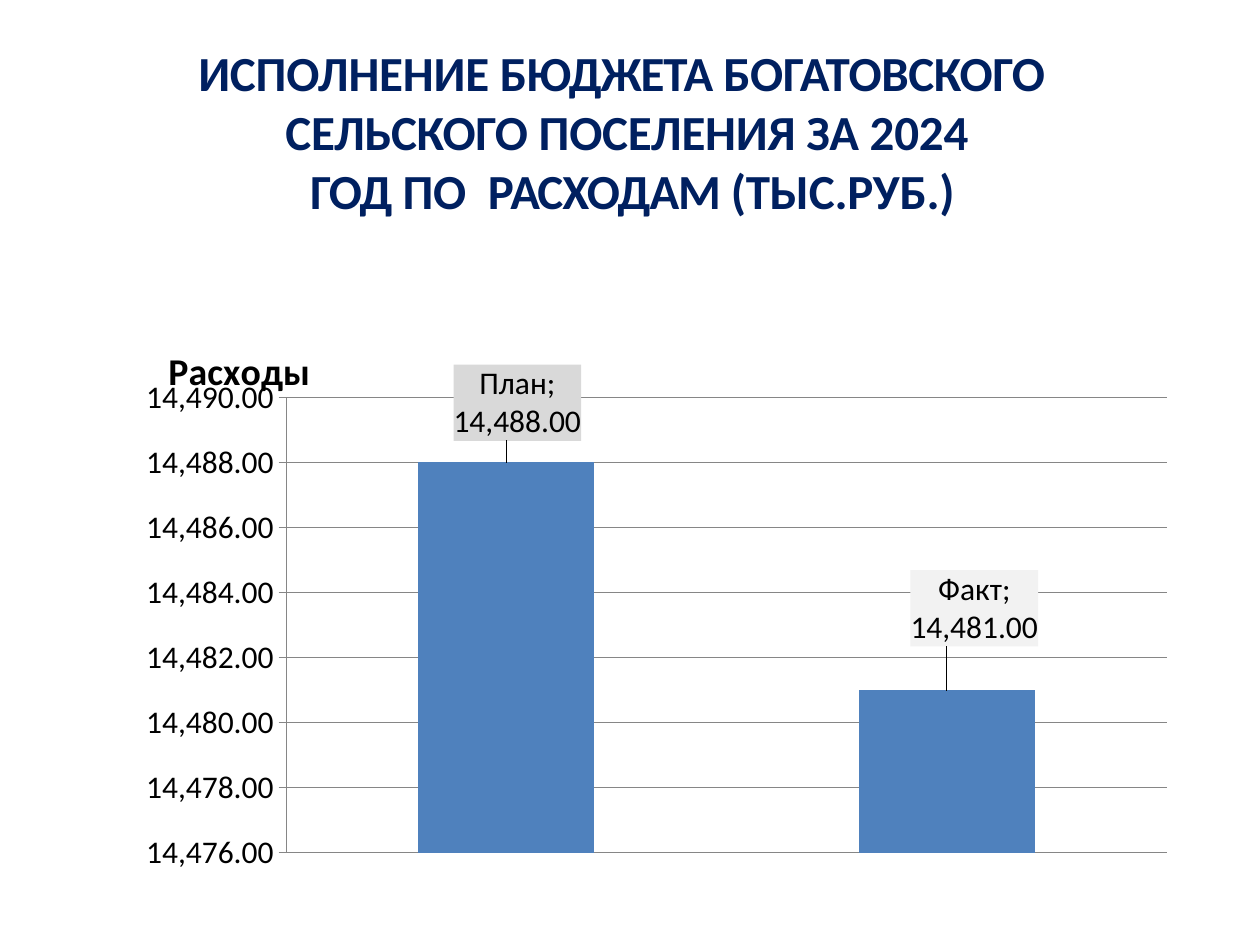
from pptx import Presentation
from pptx.chart.data import CategoryChartData
from pptx.dml.color import RGBColor
from pptx.enum.chart import XL_CHART_TYPE, XL_TICK_MARK
from pptx.enum.text import MSO_ANCHOR, MSO_AUTO_SIZE, PP_ALIGN
from pptx.oxml import parse_xml
from pptx.oxml.ns import nsdecls
from pptx.util import Inches, Pt

COLUMN = XL_CHART_TYPE.COLUMN_CLUSTERED
NAVY = RGBColor(0x00, 0x20, 0x60)
BLACK = RGBColor(0x00, 0x00, 0x00)
BLUE = RGBColor(0x4F, 0x81, 0xBD)
GRAY = RGBColor(0x86, 0x86, 0x86)
PLAN_FILL = RGBColor(0xD9, 0xD9, 0xD9)
FACT_FILL = RGBColor(0xF2, 0xF2, 0xF2)
FONT = "Calibri"
NUMBER_FORMAT = "#,##0.00"

# Text and letter spacing in hundredths of a point; None is a line break
TITLE_RUNS = [
    ("ИСПОЛНЕНИЕ ", -10), ("БЮДЖЕТА ", -50),
    ("БОГАТОВСКОГО  СЕЛЬСКОГО ", -20), ("ПОСЕЛЕНИЯ ЗА 2024", -10),
    None,
    (" ", -10), ("ГОД ", -60), ("ПО  ", -10), ("РАСХОДАМ ", -60), ("(ТЫС.РУБ.)", -10),
]
EXPENSES = {"План": 14488, "Факт": 14481}
# Fill and offset from the default place, as shares of the chart
LABELS = [(PLAN_FILL, 0.01, -0.03), (FACT_FILL, 0.025, -0.07)]


def style_font(font, size, color, bold=False):
    font.name, font.size, font.bold = FONT, Pt(size), bold
    font.color.rgb = color


def add_title(slide, box):
    sp = slide.shapes.title
    sp.left, sp.top, sp.width, sp.height = box
    tf = sp.text_frame
    tf.word_wrap = True
    tf.auto_size = MSO_AUTO_SIZE.SHAPE_TO_FIT_TEXT
    tf.vertical_anchor = MSO_ANCHOR.TOP
    tf.margin_left = tf.margin_right = tf.margin_bottom = 0
    tf.margin_top = Inches(0.01)
    p = tf.paragraphs[0]
    p.alignment = PP_ALIGN.CENTER
    for part in TITLE_RUNS:
        if part is None:
            p.add_line_break()
            continue
        r = p.add_run()
        r.text, spacing = part
        style_font(r.font, 28, NAVY, bold=True)
        r.font._element.set("spc", str(spacing))


def layout_xml(x, y, w=None, h=None):
    """Manual chart layout; with a size it places the inner plot area."""
    if w is None:
        parts = [("x", x), ("y", y)]
    else:
        parts = [("layoutTarget", "inner"), ("xMode", "edge"), ("yMode", "edge"),
                 ("x", x), ("y", y), ("w", w), ("h", h)]
    body = "".join(f'<c:{tag} val="{val}"/>' for tag, val in parts)
    return f'<c:layout {nsdecls("c")}><c:manualLayout>{body}</c:manualLayout></c:layout>'


def set_layout(element, after, xml):
    for old in element.findall("{*}layout"):
        element.remove(old)
    index = 0 if after is None else list(element).index(after) + 1
    element.insert(index, parse_xml(xml))


def add_labels(series):
    shows = {"LegendKey": 0, "Val": 1, "CatName": 1, "SerName": 0,
             "Percent": 0, "BubbleSize": 0}
    flags = "".join(f'<c:show{name} val="{on}"/>' for name, on in shows.items())
    flags += "<c:separator>; </c:separator>"
    num_fmt = f'<c:numFmt formatCode="{NUMBER_FORMAT}" sourceLinked="0"/>'
    points = "".join(
        f'<c:dLbl><c:idx val="{i}"/>{layout_xml(x, y)}{num_fmt}'
        f'<c:spPr><a:solidFill><a:srgbClr val="{fill}"/></a:solidFill></c:spPr>'
        f'<c:dLblPos val="outEnd"/>{flags}</c:dLbl>'
        for i, (fill, x, y) in enumerate(LABELS))
    xml = f'<c:dLbls {nsdecls("c", "a")}>{points}{num_fmt}{flags}</c:dLbls>'
    series._element.find("{*}cat").addprevious(parse_xml(xml))
    for point in range(len(LABELS)):
        style_font(series.points[point].data_label.font, 18, BLACK)


def add_expense_chart(slide, box):
    data = CategoryChartData(number_format=NUMBER_FORMAT)
    data.categories = list(EXPENSES)
    data.add_series("Расходы", list(EXPENSES.values()))
    chart = slide.shapes.add_chart(COLUMN, *box, data).chart
    style_font(chart.font, 18, BLACK)
    chart.has_legend = False

    chart.has_title = True
    title = chart.chart_title
    r = title.text_frame.paragraphs[0].add_run()
    r.text = "Расходы"
    style_font(r.font, 21.6, BLACK, bold=True)
    title.include_in_layout = False
    edge = layout_xml(0.07, 0.04).replace(
        "<c:manualLayout>",
        '<c:manualLayout><c:xMode val="edge"/><c:yMode val="edge"/>')
    set_layout(title._element, title._element.find("{*}tx"), edge)

    plot = chart.plots[0]
    plot.gap_width = 150
    plot.vary_by_categories = False
    set_layout(plot._element.getparent(), None, layout_xml(0.183, 0.148, 0.799, 0.818))
    series = plot.series[0]
    series.format.fill.solid()
    series.format.fill.fore_color.rgb = BLUE
    add_labels(series)

    chart.category_axis.visible = False
    axis = chart.value_axis
    axis.minimum_scale, axis.maximum_scale, axis.major_unit = 14476, 14490, 2
    axis.major_tick_mark = XL_TICK_MARK.OUTSIDE
    axis.has_major_gridlines = True
    axis.tick_labels.number_format = NUMBER_FORMAT
    axis.tick_labels.number_format_is_linked = False
    for line in (axis.format.line, axis.major_gridlines.format.line):
        line.color.rgb = GRAY
        line.width = Pt(0.75)


def main():
    prs = Presentation()
    prs.slide_width, prs.slide_height = Inches(10), Inches(7.5)
    slide = prs.slides.add_slide(prs.slide_layouts[5])
    left = Inches(0.67)
    add_title(slide, (left, Inches(0.33), Inches(8.61), Inches(1.43)))
    add_expense_chart(slide, (left, Inches(2.5), Inches(8.75), Inches(4.42)))
    prs.save("out.pptx")


if __name__ == "__main__":
    main()
